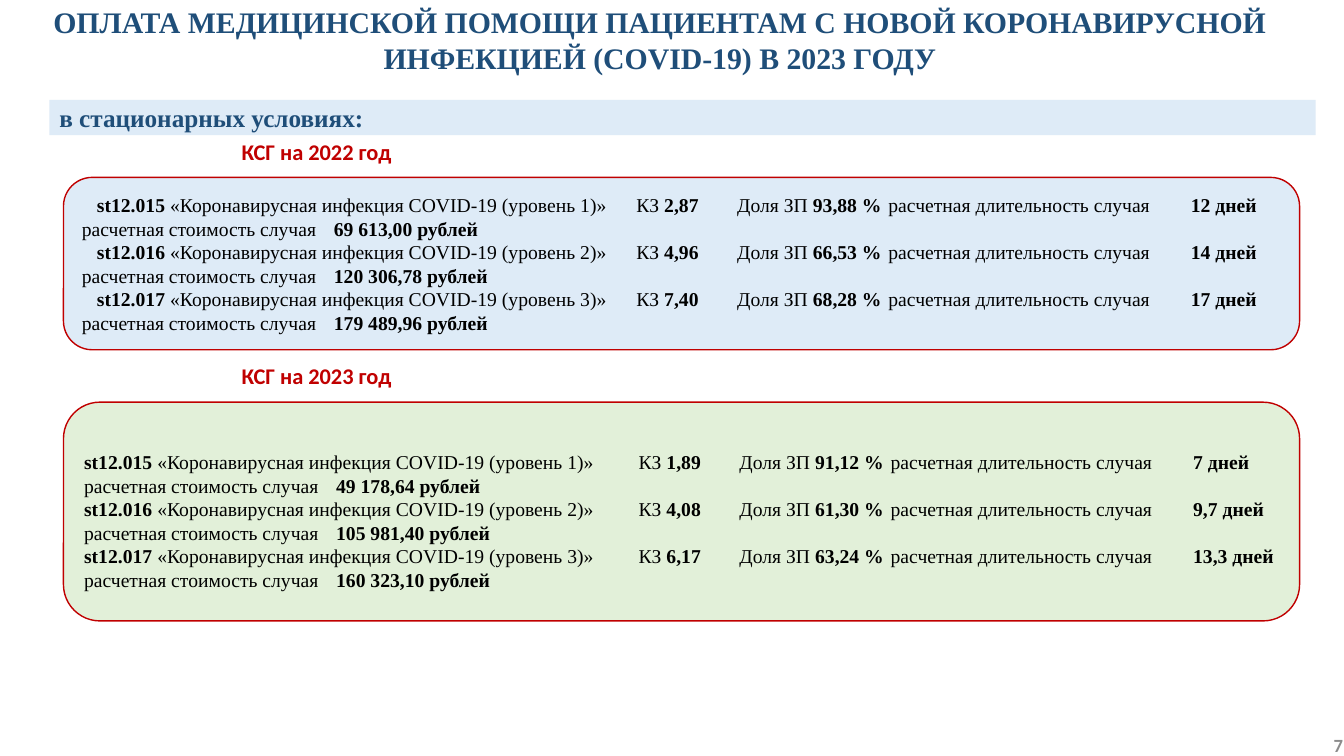
"""Build the slide on payment for COVID-19 inpatient care in 2023."""
from lxml.etree import SubElement
from pptx import Presentation
from pptx.dml.color import RGBColor as Color
from pptx.enum.shapes import MSO_SHAPE as Shape
from pptx.enum.text import MSO_ANCHOR as Anchor, MSO_AUTO_SIZE as AutoSize, PP_ALIGN as Align
from pptx.oxml.ns import qn
from pptx.util import Inches, Pt

COLORS = {
    "navy": "1F4E79", "red": "C00000", "black": "000000", "gray": "8C8C8C",
    "blue": "DEEBF7", "green": "E2F0D9",
}
SERIF, SANS = "Times New Roman", "Calibri"

PANELS = [
    {
        "year": 2022, "label_top": 1.32, "top": 1.76, "height": 1.71, "fill": "blue",
        "indent": 0.15, "margin_top": 0.05, "tabs": (2.38, 5.4, 6.21, 7.94, 10.64),
        "rows": [("2,87", "93,88", "12", "69 613,00"),
                 ("4,96", "66,53", "14", "120 306,78"),
                 ("7,40", "68,28", "17", "179 489,96")],
    },
    {
        "year": 2023, "label_top": 3.54, "top": 3.99, "height": 2.17, "fill": "green",
        "indent": 0, "margin_top": 0.23, "tabs": (2.52, 5.21, 6.02, 7.7, 10.39),
        "rows": [("1,89", "91,12", "7", "49 178,64"),
                 ("4,08", "61,30", "9,7", "105 981,40"),
                 ("6,17", "63,24", "13,3", "160 323,10")],
    },
]


class SlideBuilder:
    """Hold the style and the current slide."""

    def __init__(self, slide):
        self.shapes = slide.shapes
        self.frame_format = {"word_wrap": True, "vertical_anchor": Anchor.MIDDLE}

    def color(self, name):
        return Color.from_string(COLORS[name])

    def span(self, para, text, size, font=SERIF, color="black", bold=True):
        span = para.add_run()
        span.text = text
        values = {"size": Pt(size), "name": font, "bold": bold}
        for key, value in values.items():
            setattr(span.font, key, value)
        span.font.color.rgb = self.color(color)

    def text(self, place, text, align=Align.CENTER, frame_format=None, **style):
        box = self.shapes.add_textbox(*map(Inches, place))
        values = {"word_wrap": True, "auto_size": AutoSize.SHAPE_TO_FIT_TEXT}
        for key, value in (frame_format or values).items():
            setattr(box.text_frame, key, value)
        para = box.text_frame.paragraphs[0]
        para.alignment = align
        self.span(para, text, **style)

    def block(self, kind, place, fill, line=None):
        box = self.shapes.add_shape(kind, *map(Inches, place))
        box.shadow.inherit = False
        box.fill.solid()
        box.fill.fore_color.rgb = self.color(fill)
        if line:
            box.line.color.rgb = self.color(line)
            box.line.width = Pt(1)
        else:
            box.line.fill.background()
        for key, value in self.frame_format.items():
            setattr(box.text_frame, key, value)
        box.text_frame.paragraphs[0].alignment = Align.LEFT
        return box.text_frame

    def bar(self, place, text):
        frame = self.block(Shape.RECTANGLE, place, "blue")
        self.span(frame.paragraphs[0], text, 18, color="navy")

    def tab_stops(self, para, indent, positions):
        properties = para._p.get_or_add_pPr()
        properties.set("marL", "0")
        properties.set("indent", str(Inches(indent)))
        stops = SubElement(properties, qn("a:tabLst"))
        for position in positions:
            SubElement(stops, qn("a:tab"), pos=str(Inches(position)), algn="l")

    def panel(self, panel):
        self.text((0.63, panel["label_top"], 5.02, 0.37), f"КСГ на {panel['year']} год",
                  size=16, font=SANS, color="red")
        place = (0.63, panel["top"], 12.26, panel["height"])
        frame = self.block(Shape.ROUNDED_RECTANGLE, place, panel["fill"], "red")
        frame.margin_top = Inches(panel["margin_top"])
        for level, (ratio, share, days, cost) in enumerate(panel["rows"], 1):
            para = frame.paragraphs[0] if level == 1 else frame.add_paragraph()
            para.alignment = Align.LEFT
            self.tab_stops(para, panel["indent"], panel["tabs"])
            pairs = [
                (f"st12.{14 + level:03} ", f"«Коронавирусная инфекция COVID-19 (уровень {level})»\tКЗ "),
                (ratio, "\tДоля ЗП "),
                (f"{share} %", "\tрасчетная длительность случая\t"),
            ]
            for strong, plain in pairs:
                self.span(para, strong, 14)
                self.span(para, plain, 14, bold=False)
            self.span(para, f"{days} дней", 14)
            para.add_line_break()
            self.span(para, "расчетная стоимость случая\t", 14, bold=False)
            self.span(para, f"{cost} рублей", 14)


def main():
    deck = Presentation()
    deck.slide_width, deck.slide_height = Inches(13.33), Inches(7.5)
    page = SlideBuilder(deck.slides.add_slide(deck.slide_layouts[6]))
    page.text((0.21, -0.01, 12.67, 0.82),
              "ОПЛАТА МЕДИЦИНСКОЙ ПОМОЩИ ПАЦИЕНТАМ С НОВОЙ КОРОНАВИРУСНОЙ "
              "ИНФЕКЦИЕЙ (COVID-19) В 2023 ГОДУ", size=21.3, color="navy")
    page.bar((0.49, 0.99, 12.56, 0.35), "в стационарных условиях:")
    for panel in PANELS:
        page.panel(panel)
    number_format = {**page.frame_format, "margin_left": Inches(0.07), "margin_right": Inches(0.07),
                     "margin_top": Inches(0.04), "margin_bottom": Inches(0.04)}
    page.text((10.39, 7.19, 3, 0.4), "7", Align.RIGHT, number_format,
              size=13.3, font=SANS, color="gray")
    deck.save("out.pptx")


if __name__ == "__main__":
    main()
